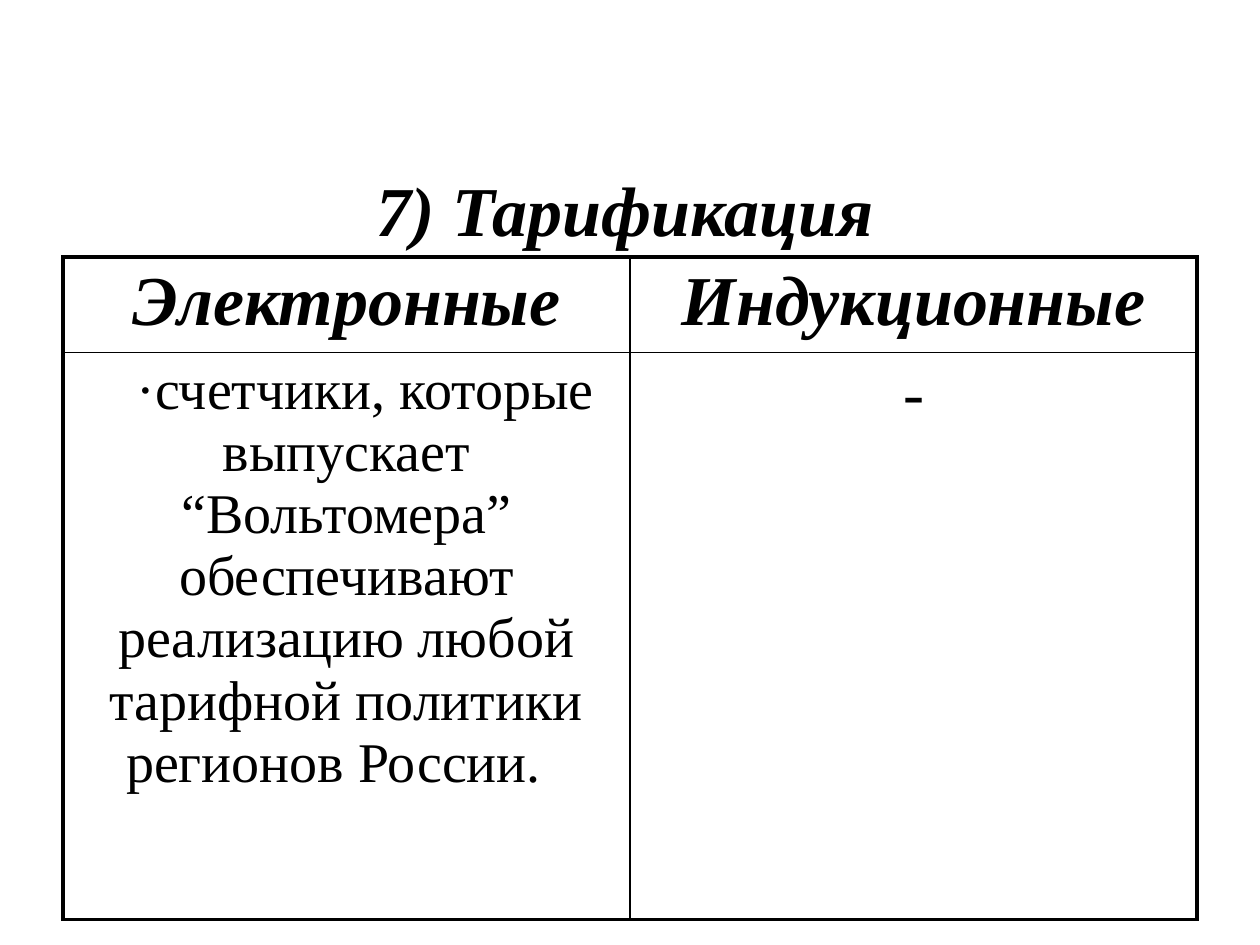
from lxml.etree import SubElement
from pptx import Presentation
from pptx.dml.color import RGBColor as RGB
from pptx.enum.text import MSO_ANCHOR as ANCHOR, MSO_AUTO_SIZE as AUTO, PP_ALIGN as ALIGN
from pptx.oxml.ns import qn
from pptx.util import Cm, Pt

COLORS = {"ink": "000000"}
THICK, THIN = 2.25, 1


class SlideBuilder:
    """Holds the text style and the current slide."""

    def __init__(self, prs, font="Times New Roman"):
        self.font = font
        self.slide = prs.slides.add_slide(prs.slide_layouts[5])

    def set_text(self, p, text, size, bold=False):
        p.text = text
        p.alignment = ALIGN.CENTER
        for r in p.runs:
            f = r.font
            f.name, f.size, f.bold, f.italic = self.font, Pt(size), bold, bold
            f.color.rgb = RGB.from_string(COLORS["ink"])

    def title(self, text, left, top, width, height):
        sp = self.slide.shapes.title
        sp.left, sp.top, sp.width, sp.height = Cm(left), Cm(top), Cm(width), Cm(height)
        tf = sp.text_frame
        tf.word_wrap, tf.auto_size = True, AUTO.NONE
        tf.vertical_anchor = ANCHOR.BOTTOM
        self.set_text(tf.paragraphs[0], text, 40, True)

    def border(self, cell, widths):
        tc_pr = cell._tc.get_or_add_tcPr()
        for side, width in zip("LRTB", widths):
            ln = SubElement(tc_pr, qn(f"a:ln{side}"), w=str(Pt(width)))
            fill = SubElement(ln, qn("a:solidFill"))
            SubElement(fill, qn("a:srgbClr"), val=COLORS["ink"])

    def table(self, rows, left, top, widths, heights):
        frame = self.slide.shapes.add_table(
            len(rows), len(widths), Cm(left), Cm(top), Cm(sum(widths)), Cm(sum(heights)))
        table = frame.table
        table.first_row = table.horz_banding = False
        for column, width in zip(table.columns, widths):
            column.width = Cm(width)
        for row, height in zip(table.rows, heights):
            row.height = Cm(height)
        for i, row in enumerate(rows):
            for j, (text, size, bold) in enumerate(row):
                cell = table.cell(i, j)
                edges = (j == 0, j == len(widths) - 1, i == 0, i == len(rows) - 1)
                self.border(cell, [THICK if edge else THIN for edge in edges])
                cell.fill.background()
                self.set_text(cell.text_frame.paragraphs[0], text, size, bold)
        return table


def main():
    prs = Presentation()
    prs.slide_width, prs.slide_height = Cm(25.4), Cm(19.05)
    s = SlideBuilder(prs)
    s.title("7) Тарификация", 1.4, 3.22, 22.4, 1.96)
    rows = [
        [("Электронные", 40, True), ("Индукционные", 40, True)],
        [("·счетчики, которые выпускает “Вольтомера” обеспечивают реализацию "
          "любой тарифной политики регионов России.\t", 32, False), ("-", 36, False)],
    ]
    table = s.table(rows, 1.27, 5.18, [11.43, 11.43], [1.93, 11.43])
    p = table.cell(1, 0).text_frame.paragraphs[0]
    p._p.get_or_add_pPr().set("indent", str(Cm(0.76)))
    prs.save("out.pptx")


if __name__ == "__main__":
    main()
